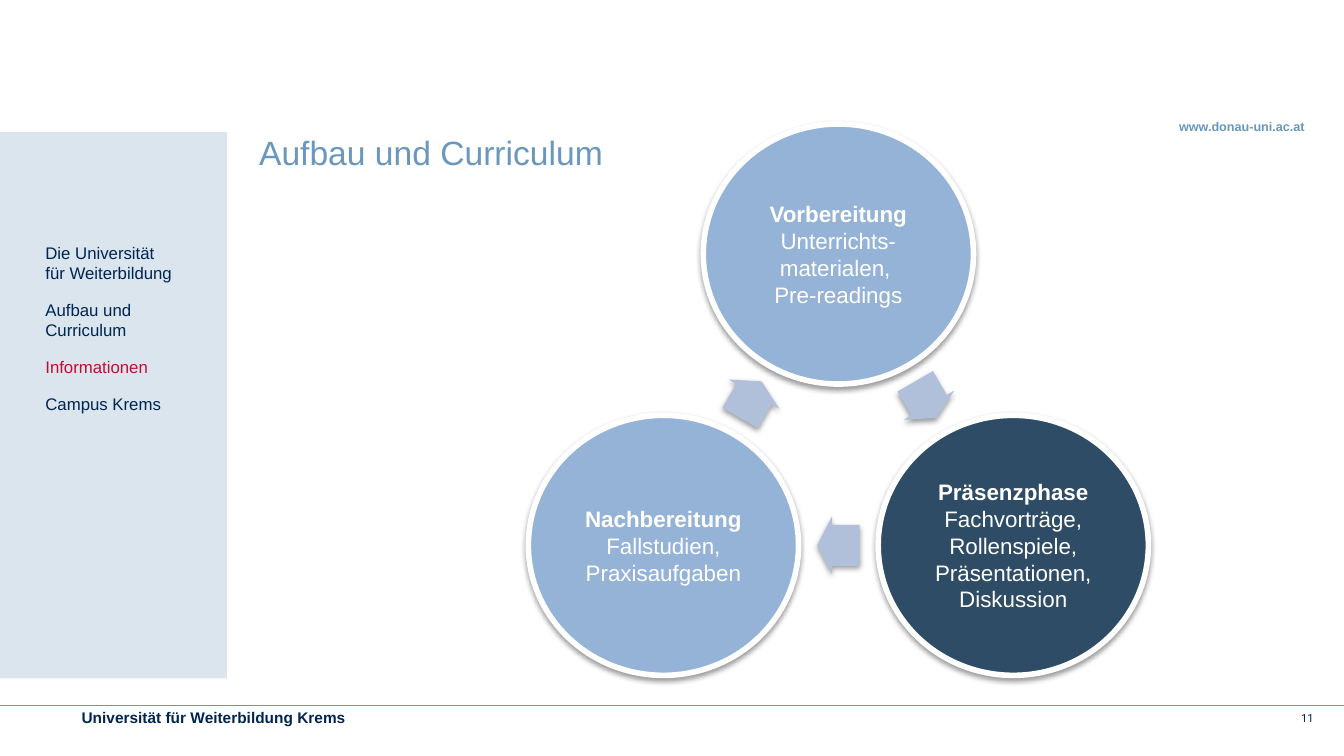
import lxml.etree
import pptx
import pptx.dml.color
import pptx.enum.shapes
import pptx.enum.text
import pptx.oxml
import pptx.oxml.ns
import pptx.util

Inches = pptx.util.Inches
RGBColor = pptx.dml.color.RGBColor
SHAPE = pptx.enum.shapes.MSO_SHAPE
ALIGN = pptx.enum.text.PP_ALIGN
ANCHOR = pptx.enum.text.MSO_ANCHOR

NAVY = RGBColor(0x00, 0x25, 0x51)
BLUE = RGBColor(0x6A, 0x97, 0xBC)
PALE = RGBColor(0xDA, 0xE5, 0xEE)
RED = RGBColor(0xB7, 0x12, 0x34)
WHITE = RGBColor(0xFF, 0xFF, 0xFF)
LIGHT_PHASE = RGBColor(0x95, 0xB3, 0xD7)
DARK_PHASE = RGBColor(0x2E, 0x4C, 0x65)
ARROW = RGBColor(0xB1, 0xC0, 0xDA)

SHADOW = (
    '<a:effectLst %s><a:outerShdw blurRad="50800" dist="25400" dir="5400000" rotWithShape="0">'
    '<a:srgbClr val="000000"><a:alpha val="38000"/></a:srgbClr></a:outerShdw></a:effectLst>'
    % pptx.oxml.ns.nsdecls("a")
)

NAVIGATION = [
    ("Die Universität \nfür Weiterbildung", {}),
    ("Aufbau und Curriculum", {}),
    ("Informationen", {"color": RED}),
    ("Campus Krems", {}),
]
PHASES = [
    ("Vorbereitung", "Unterrichts-materialen, \nPre-readings", LIGHT_PHASE, 1.2),
    ("Präsenzphase", "Fachvorträge, Rollenspiele, Präsentationen, Diskussion", DARK_PHASE, 1.46),
    ("Nachbereitung", "Fallstudien, Praxisaufgaben", LIGHT_PHASE, 0.93),
]


def add_text(page, box, paragraphs, size, color, font="Arial", bold=False, align=ALIGN.LEFT,
             anchor=ANCHOR.TOP, inset=0, wrap=True, gap=0, line_spacing=None):
    """Write paragraphs of (text, overrides) in a text box at box."""
    frame = page.shapes.add_textbox(*map(Inches, box)).text_frame
    frame.word_wrap = wrap
    frame.vertical_anchor = anchor
    frame.margin_left = frame.margin_right = Inches(inset)
    frame.margin_top = frame.margin_bottom = Inches(inset)
    for index, (text, overrides) in enumerate(paragraphs):
        para = frame.add_paragraph() if index else frame.paragraphs[0]
        para.alignment = align
        para.line_spacing = line_spacing
        para.space_before = pptx.util.Pt(gap if index else 0)
        for number, line in enumerate(text.split("\n")):
            if number:
                para.add_line_break()
            span = para.add_run()
            span.text = line
            span.font.name = font
            span.font.size = pptx.util.Pt(size)
            span.font.bold = overrides.get("bold", bold)
            span.font.color.rgb = overrides.get("color", color)


def add_filled(page, kind, box, fill, border=None, shadow=False):
    """Add a filled preset shape, optionally with a border and a soft shadow."""
    shape = page.shapes.add_shape(kind, *map(Inches, box))
    shape.shadow.inherit = False
    shape.fill.solid()
    shape.fill.fore_color.rgb = fill
    if border is None:
        shape.line.fill.background()
    else:
        shape.line.color.rgb = border
        shape.line.width = pptx.util.Pt(4)
    if shadow:
        properties = shape._element.spPr
        effects = properties.find(pptx.oxml.ns.qn("a:effectLst"))
        properties.replace(effects, pptx.oxml.parse_xml(SHADOW))
    return shape


def add_sidebar(page, box):
    """Draw the navigation panel and its entries."""
    left, top, width, height = box
    add_filled(page, SHAPE.RECTANGLE, box, PALE)
    add_text(page, (left + 0.46, top + 1.1, 1.42, 4.14), NAVIGATION, 12, NAVY, gap=12)


def add_header(page, box):
    """Write the web address and the title."""
    left, top, width, height = box
    add_text(page, (left + width - 1.36, top, 1.36, 0.25), [("www.donau-uni.ac.at", {})], 9, BLUE,
             bold=True, align=ALIGN.RIGHT, inset=0.05, wrap=False, line_spacing=1.2)
    add_text(page, (left, top + 0.21, 7.98, 0.84), [("Aufbau und Curriculum", {})], 24, BLUE)


def add_footer(page, box):
    """Draw the rule, the institution name and the page number."""
    left, top, width, height = box
    rule = page.shapes.add_connector(pptx.enum.shapes.MSO_CONNECTOR.STRAIGHT, Inches(left),
                                     Inches(top), Inches(left + width), Inches(top))
    rule.line.color.rgb = BLUE
    rule.line.width = pptx.util.Pt(0.75)
    lxml.etree.SubElement(rule._element.spPr, pptx.oxml.ns.qn("a:effectLst"))
    add_text(page, (left + 0.82, top + 0.02, 6.3, 0.18),
             [("Universität für Weiterbildung Krems", {})], 11, NAVY, bold=True)
    add_text(page, (left + width - 0.44, top + 0.05, 0.14, 0.14), [("11", {})], 8, NAVY,
             font="Roboto", align=ALIGN.RIGHT, anchor=ANCHOR.MIDDLE, wrap=False)


def add_cycle(page, box):
    """Draw the three phases in a triangle with an arrow midway between neighbours."""
    left, top, width, height = box
    across, down = 2.68, 2.58
    upper, lower = top + down / 2, top + height - down / 2
    centers = [(left + width / 2, upper), (left + width - across / 2, lower),
               (left + across / 2, lower)]
    for index, (heading, detail, fill, text_height) in enumerate(PHASES):
        x, y = centers[index]
        add_filled(page, SHAPE.OVAL, (x - across / 2, y - down / 2, across, down),
                   fill, border=WHITE, shadow=True)
        add_text(page, (x - 0.95, y - text_height / 2, 1.9, text_height),
                 [(heading, {"bold": True}), (detail, {})], 16, WHITE,
                 align=ALIGN.CENTER, anchor=ANCHOR.MIDDLE, inset=0.07)
        next_x, next_y = centers[(index + 1) % len(centers)]
        arrow_box = ((x + next_x) / 2 - 0.21, (y + next_y) / 2 - 0.29, 0.42, 0.58)
        arrow = add_filled(page, SHAPE.RIGHT_ARROW, arrow_box, ARROW, shadow=True)
        arrow.adjustments[0] = 0.7
        arrow.adjustments[1] = 0.35
        arrow.rotation = 60 + 120 * index


def main():
    """Build and save the deck."""
    deck = pptx.Presentation()
    deck.slide_width, deck.slide_height = Inches(13.33), Inches(7.5)
    page = deck.slides.add_slide(deck.slide_layouts[6])
    add_sidebar(page, (-0.01, 1.31, 2.26, 5.42))
    add_header(page, (2.57, 1.1, 10.42, 1.05))
    add_footer(page, (-0.01, 7, 13.34, 0.5))
    add_cycle(page, (5.24, 1.23, 6.15, 5.47))
    deck.save("out.pptx")


if __name__ == "__main__":
    main()
